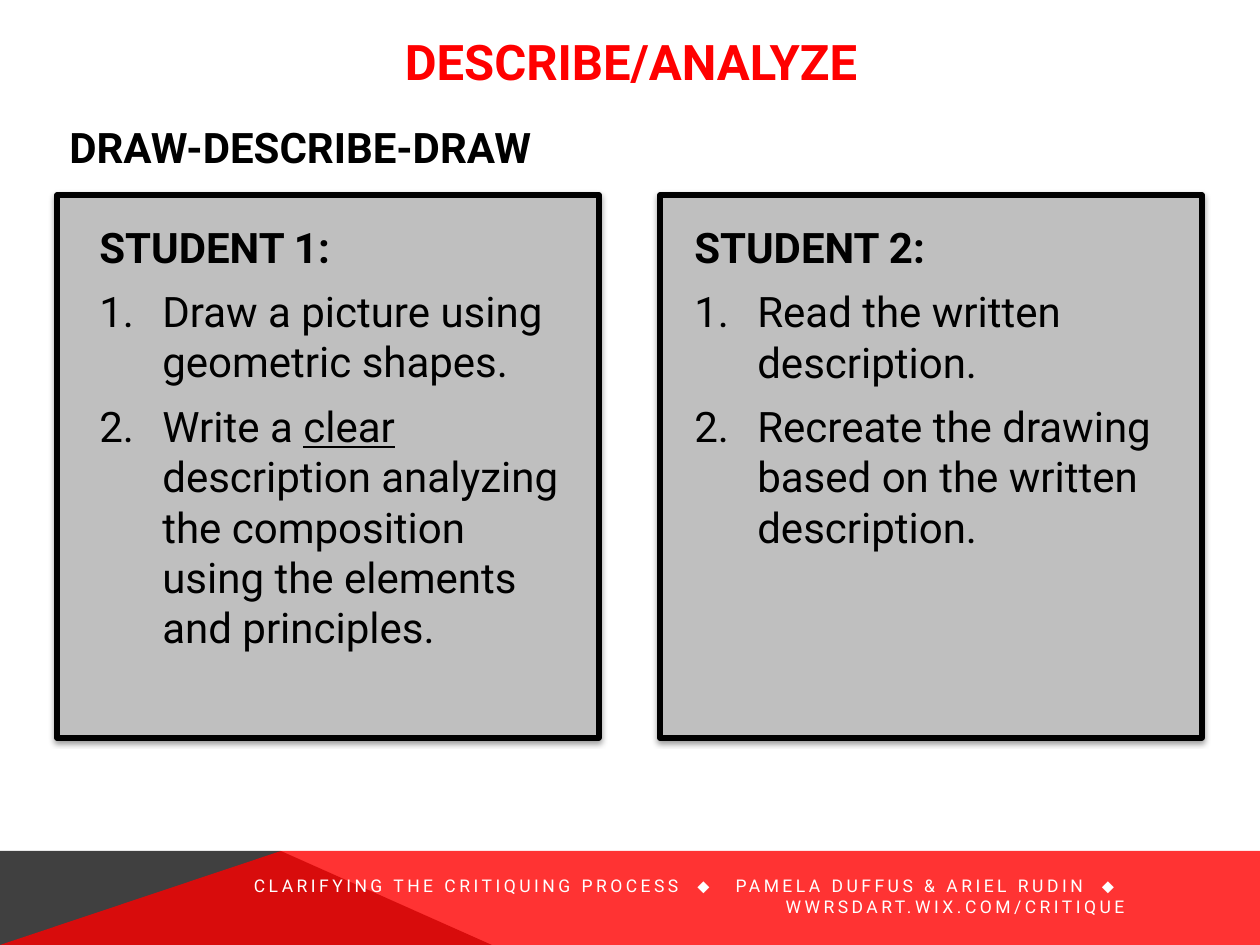
"""Build the Describe/Analyze slide with two student task cards."""
from dataclasses import dataclass

import lxml.etree
import pptx
import pptx.dml.color
import pptx.enum.shapes
import pptx.enum.text
import pptx.oxml.ns
import pptx.util

Align = pptx.enum.text.PP_ALIGN
Anchor = pptx.enum.text.MSO_ANCHOR


@dataclass(frozen=True)
class Theme:
    font: str = "Roboto"
    symbol_font: str = "Arial"
    red: str = "FF0000"
    dark: str = "404040"
    card: str = "BFBFBF"
    ink: str = "000000"
    paper: str = "FFFFFF"
    title_size: int = 28
    body_size: int = 24
    footer_size: int = 10
    tracking: int = 200
    symbol_tracking: int = 600


class SlideBuilder:
    EMU_PER_PX = 914400 / 126

    def __init__(self, theme, width, height):
        self.theme = theme
        self.deck = pptx.Presentation()
        self.deck.slide_width, self.deck.slide_height = self.emu(width, height)
        self.slide = self.deck.slides.add_slide(self.deck.slide_layouts[5])

    def emu(self, *lengths):
        return [pptx.util.Emu(round(length * self.EMU_PER_PX)) for length in lengths]

    def child(self, parent, tag, **attributes):
        return lxml.etree.SubElement(parent, pptx.oxml.ns.qn(tag), attributes)

    def paint(self, shape, color):
        shape.shadow.inherit = False
        shape.fill.solid()
        shape.fill.fore_color.rgb = pptx.dml.color.RGBColor.from_string(color)

    def polygon(self, points, color, alpha=None):
        outline = self.slide.shapes.build_freeform(*points[0], scale=self.EMU_PER_PX)
        outline.add_line_segments(points[1:], close=True)
        area = outline.convert_to_shape()
        self.paint(area, color)
        area.line.fill.background()
        if alpha:
            tint = area.fill._xPr.find(".//" + pptx.oxml.ns.qn("a:srgbClr"))
            self.child(tint, "a:alpha", val=str(alpha * 1000))

    def card(self, *box):
        card = self.slide.shapes.add_shape(
            pptx.enum.shapes.MSO_SHAPE.RECTANGLE, *self.emu(*box))
        self.paint(card, self.theme.card)
        card.line.color.rgb = pptx.dml.color.RGBColor.from_string(self.theme.ink)
        card.line.width = pptx.util.Pt(3)
        effects = card._element.spPr.find(pptx.oxml.ns.qn("a:effectLst"))
        shadow = self.child(effects, "a:outerShdw", blurRad="40000", dist="20000",
                            dir="5400000", rotWithShape="0")
        shade = self.child(shadow, "a:srgbClr", val=self.theme.ink)
        self.child(shade, "a:alpha", val="38000")

    def frame(self, shape, anchor):
        frame = shape.text_frame
        frame.word_wrap = True
        frame.auto_size = pptx.enum.text.MSO_AUTO_SIZE.NONE
        frame.vertical_anchor = anchor
        return frame

    def run(self, paragraph, text, size, color, bold=False, underline=None,
            font=None, tracking=None):
        run = paragraph.add_run()
        run.text = text
        run.font.name = font or self.theme.font
        run.font.size = pptx.util.Pt(size)
        run.font.bold = bold
        run.font.underline = underline
        run.font.color.rgb = pptx.dml.color.RGBColor.from_string(color)
        if tracking:
            run._r.get_or_add_rPr().set("spc", str(tracking))

    def text_box(self, box, anchor=Anchor.TOP):
        return self.frame(self.slide.shapes.add_textbox(*self.emu(*box)), anchor)

    def title(self, box, text):
        title = self.slide.shapes.title
        title.left, title.top, title.width, title.height = self.emu(*box)
        paragraph = self.frame(title, Anchor.MIDDLE).paragraphs[0]
        paragraph.alignment = Align.CENTER
        self.run(paragraph, text, self.theme.title_size, self.theme.red, bold=True)

    def heading(self, box, text):
        paragraph = self.text_box(box).paragraphs[0]
        self.run(paragraph, text, self.theme.body_size, self.theme.ink, bold=True)

    def tasks(self, box, student, steps):
        frame = self.text_box(box)
        self.run(frame.paragraphs[0], student, self.theme.body_size,
                 self.theme.ink, bold=True)
        indent = self.emu(63)[0]
        for step in steps:
            paragraph = frame.add_paragraph()
            properties = paragraph._p.get_or_add_pPr()
            properties.set("marL", str(indent))
            properties.set("indent", str(-indent))
            self.child(properties, "a:buFont", typeface=self.theme.font)
            self.child(properties, "a:buAutoNum", type="arabicPeriod")
            paragraph.space_before = pptx.util.Pt(8)
            for text, underline in step:
                self.run(paragraph, text, self.theme.body_size, self.theme.ink,
                         underline=underline)

    def footer(self, box, credits):
        theme = self.theme
        paragraph = self.text_box(box, Anchor.MIDDLE).paragraphs[0]
        paragraph.alignment = Align.RIGHT
        for position, credit in enumerate(credits):
            if position:
                self.run(paragraph, " ⬥ ", theme.footer_size, theme.paper,
                         font=theme.symbol_font, tracking=theme.symbol_tracking)
            self.run(paragraph, credit, theme.footer_size, theme.paper,
                     tracking=theme.tracking)


def main():
    theme = Theme()
    width, height = 1260, 945
    band_top, peak, foot = 851, 281, 492
    builder = SlideBuilder(theme, width, height)

    builder.polygon([(0, height), (0, band_top), (peak, band_top), (foot, height)],
                    theme.dark)
    builder.polygon([(0, height), (peak, band_top), (width, band_top),
                     (width, height)], theme.red, alpha=80)

    builder.title((113, 23, 1036, 76), "DESCRIBE/ANALYZE")
    builder.heading((57, 115, 1145, 63), "DRAW-DESCRIBE-DRAW")

    students = [
        (57, (87, 215, 489, 489), "STUDENT 1:", [
            [("Draw a picture using geometric shapes.", None)],
            [("Write a ", None), ("clear", True),
             (" description analyzing the composition using the elements "
              "and principles.", None)],
        ]),
        (660, (682, 215, 501, 475), "STUDENT 2:", [
            [("Read the written description.", None)],
            [("Recreate the drawing based on the written description.", None)],
        ]),
    ]
    for card_left, text_area, student, steps in students:
        builder.card(card_left, 195, 542, 543)
        builder.tasks(text_area, student, steps)

    builder.footer((140, 877, 997, 38), [
        "CLARIFYING THE CRITIQUING PROCESS",
        "PAMELA DUFFUS & ARIEL RUDIN",
        "WWRSDART.WIX.COM/CRITIQUE",
    ])
    builder.deck.save("out.pptx")


if __name__ == "__main__":
    main()
